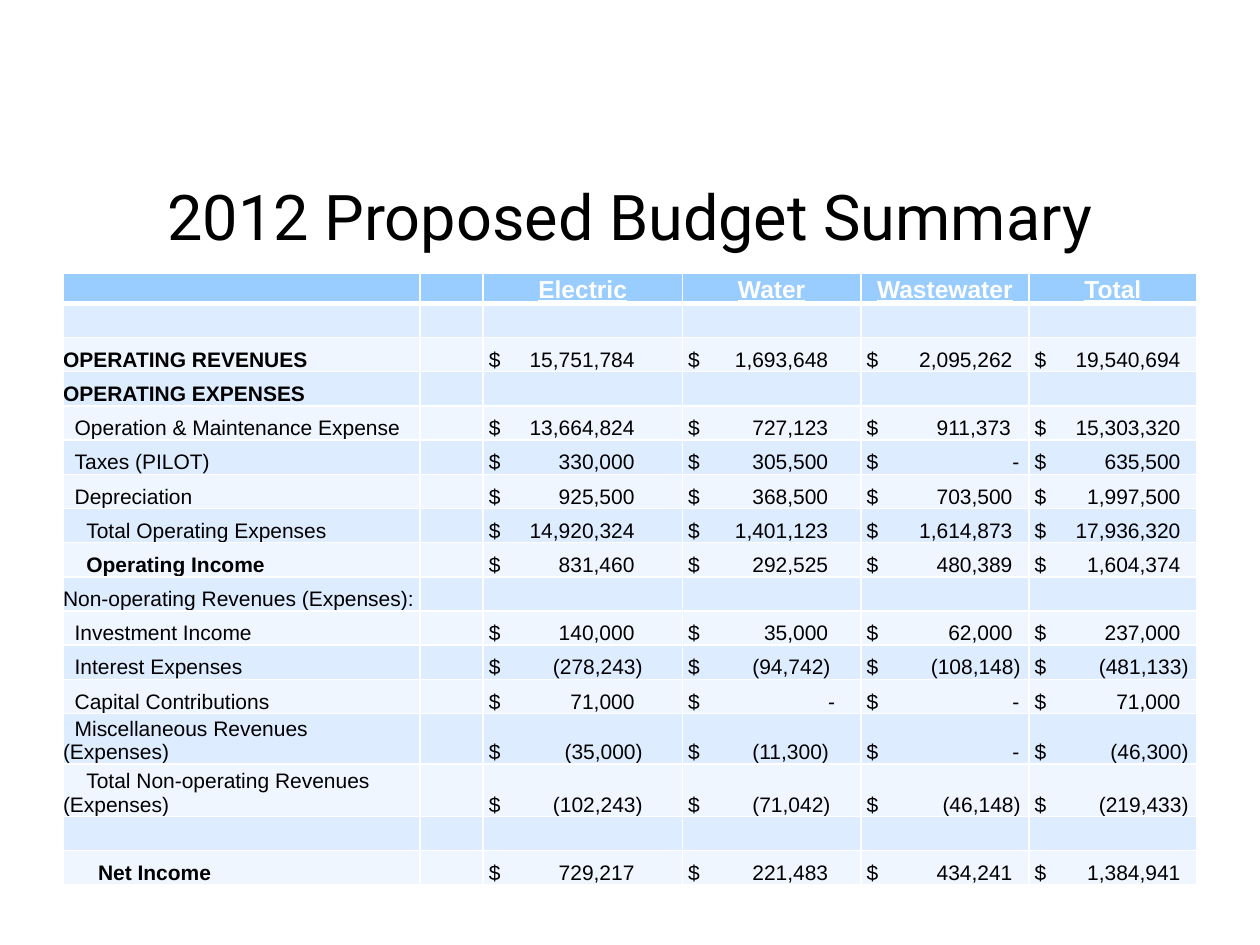
from lxml.etree import SubElement
from pptx import Presentation
from pptx.dml.color import RGBColor
from pptx.enum.text import MSO_ANCHOR, PP_ALIGN
from pptx.oxml.ns import qn
from pptx.util import Pt

BLACK = RGBColor(0x00, 0x00, 0x00)
WHITE = RGBColor(0xFF, 0xFF, 0xFF)
HEADER_BLUE = RGBColor(0x99, 0xCC, 0xFF)
BAND_DARK = RGBColor(0xDE, 0xEC, 0xFF)
BAND_LIGHT = RGBColor(0xEF, 0xF6, 0xFF)

INDENT = 6.67  # one outline level of the row labels
DOLLAR_INSET = 3.33
COL_WIDTHS = [204, 36, 114, 102, 96, 96]

# Amounts are set in units of one space of 12 pt Arial
SPACE = 3.33
CHAR_UNITS = {",": 1, "(": 1.2, ")": 1.2, "-": 1.2}
DIGIT_UNITS = 2
EDGES = [23, 22, 23, 23]  # from the dollar sign to the end of the digits
BRACKET_HANGS = [1.4, 0.4, 1.4, 1.4]
DASH_HANG = 1.2

HEADERS = ["", "", "Electric", "Water", "Wastewater", "Total"]
# label, outline level, bold, amounts
ROWS = [
    ("", 0, False, []),
    ("OPERATING REVENUES", 0, True, ["15,751,784", "1,693,648", "2,095,262", "19,540,694"]),
    ("OPERATING EXPENSES", 0, True, []),
    ("Operation & Maintenance Expense", 1, False, ["13,664,824", "727,123", "911,373", "15,303,320"]),
    ("Taxes (PILOT)", 1, False, ["330,000", "305,500", "-", "635,500"]),
    ("Depreciation", 1, False, ["925,500", "368,500", "703,500", "1,997,500"]),
    ("Total Operating Expenses", 2, False, ["14,920,324", "1,401,123", "1,614,873", "17,936,320"]),
    ("Operating Income", 2, True, ["831,460", "292,525", "480,389", "1,604,374"]),
    ("Non-operating Revenues (Expenses):", 0, False, []),
    ("Investment Income", 1, False, ["140,000", "35,000", "62,000", "237,000"]),
    ("Interest Expenses", 1, False, ["(278,243)", "(94,742)", "(108,148)", "(481,133)"]),
    ("Capital Contributions", 1, False, ["71,000", "-", "-", "71,000"]),
    ("Miscellaneous Revenues (Expenses)", 1, False, ["(35,000)", "(11,300)", "-", "(46,300)"]),
    ("Total Non-operating Revenues (Expenses)", 2, False,
     ["(102,243)", "(71,042)", "(46,148)", "(219,433)"]),
    ("", 0, False, []),
    ("Net Income", 3, True, ["729,217", "221,483", "434,241", "1,384,941"]),
]


def write(tf, text, size=12, font="Arial", color=BLACK, bold=False,
          underline=False, align=PP_ALIGN.LEFT, indent=0, spacing=0):
    """Add a run to the first paragraph; indent moves the first line only."""
    p = tf.paragraphs[0]
    p.alignment = align
    pPr = p._p.get_or_add_pPr()
    pPr.set("marL", "0")
    pPr.set("indent", str(Pt(indent)))
    if not text:
        SubElement(p._p, qn("a:endParaRPr"), sz=str(size * 100))
        return
    r = p.add_run()
    r.text = text
    r.font.size = Pt(size)
    r.font.name = font
    r.font.bold = bold
    r.font.underline = underline
    r.font.color.rgb = color
    if spacing:
        r._r.get_or_add_rPr().set("spc", str(round(spacing * 100)))


def style_cell(cell, fill, top=1, bottom=1):
    """Set fill, white borders (top and bottom widths in points) and insets."""
    tcPr = cell._tc.get_or_add_tcPr()
    for side, width in (("L", 1), ("R", 1), ("T", top), ("B", bottom)):
        ln = SubElement(tcPr, qn(f"a:ln{side}"), w=str(Pt(width)))
        solid = SubElement(ln, qn("a:solidFill"))
        SubElement(solid, qn("a:srgbClr"), val=str(WHITE))
    cell.fill.solid()
    cell.fill.fore_color.rgb = fill
    cell.vertical_anchor = MSO_ANCHOR.BOTTOM
    cell.margin_left = cell.margin_right = cell.margin_top = cell.margin_bottom = 0


prs = Presentation()
prs.slide_width = Pt(720)
prs.slide_height = Pt(540)
s = prs.slides.add_slide(prs.slide_layouts[6])

title = s.shapes.add_textbox(Pt(36), Pt(96), Pt(648), Pt(54))
tf = title.text_frame
tf.word_wrap = True
tf.vertical_anchor = MSO_ANCHOR.MIDDLE
write(tf, "2012 Proposed Budget Summary", size=36, font="Roboto", align=PP_ALIGN.CENTER)

table = s.shapes.add_table(len(ROWS) + 1, len(COL_WIDTHS),
                           Pt(36), Pt(156), Pt(648), Pt(342)).table
for col, width in zip(table.columns, COL_WIDTHS):
    col.width = Pt(width)

table.rows[0].height = Pt(17.4)
for c, header in enumerate(HEADERS):
    cell = table.cell(0, c)
    style_cell(cell, HEADER_BLUE, bottom=3)
    write(cell.text_frame, header, size=14, color=WHITE, bold=True,
          underline=True, align=PP_ALIGN.CENTER)

for i, (label, level, bold, amounts) in enumerate(ROWS, start=1):
    table.rows[i].height = Pt(30 if label.startswith("Total Non") else 19.55)
    for c in range(len(COL_WIDTHS)):
        style_cell(table.cell(i, c), BAND_DARK if i % 2 else BAND_LIGHT,
                   top=3 if i == 1 else 1)
    write(table.cell(i, 0).text_frame, label, bold=bold, indent=level * INDENT)
    write(table.cell(i, 1).text_frame, "")
    for c, edge in enumerate(EDGES):
        cell = table.cell(i, c + 2)
        tf = cell.text_frame
        if not amounts:
            write(tf, "")
            continue
        amount = amounts[c]
        if amount == "-":
            edge += DASH_HANG
        elif amount.startswith("("):
            edge += BRACKET_HANGS[c]
        units = sum(CHAR_UNITS.get(char, DIGIT_UNITS) for char in amount)
        cell.margin_left = Pt(DOLLAR_INSET)
        write(tf, "$")
        write(tf, " ", spacing=(edge - units - 1) * SPACE)
        write(tf, amount)

prs.save("out.pptx")
